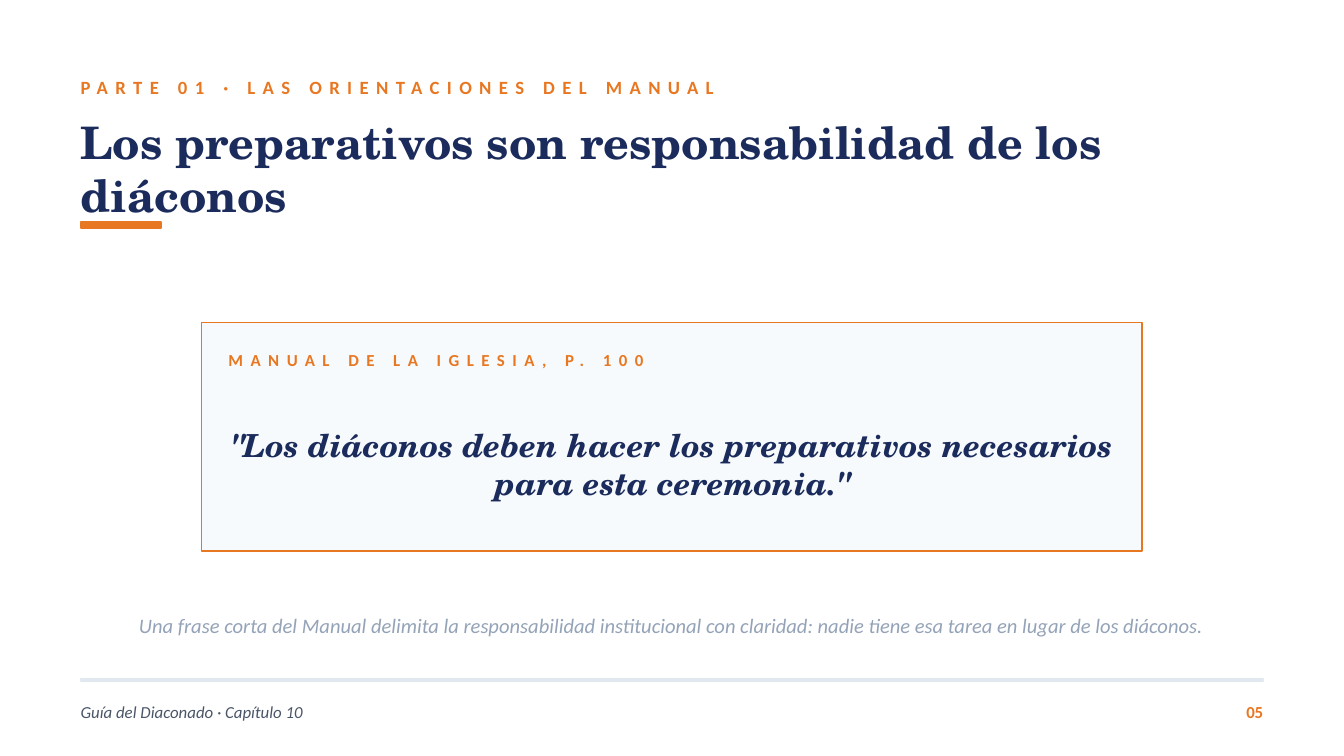
from typing import NamedTuple

from pptx import Presentation
from pptx.dml.color import RGBColor
from pptx.enum.shapes import MSO_SHAPE
from pptx.enum.text import MSO_ANCHOR, MSO_AUTO_SIZE, PP_ALIGN
from pptx.util import Pt

RECTANGLE = MSO_SHAPE.RECTANGLE
TOP, MIDDLE = MSO_ANCHOR.TOP, MSO_ANCHOR.MIDDLE
LEFT, CENTER, RIGHT = PP_ALIGN.LEFT, PP_ALIGN.CENTER, PP_ALIGN.RIGHT
NO_AUTO_SIZE = MSO_AUTO_SIZE.NONE
TITLE_ONLY = 5

SANS, SERIF = "Calibri", "TeX Gyre Schola"
COLORS = {
    "navy": "1A2B5C",
    "orange": "E87722",
    "panel": "F7FAFC",
    "caption": "94A3B8",
    "rule": "E2E8F0",
    "footer": "4A5568",
    "background": "FFFFFF",
}

# Page grid, in points
PAGE_WIDTH, PAGE_HEIGHT = 720, 405
MARGIN = 43.2
CONTENT_WIDTH = PAGE_WIDTH - 2 * MARGIN
PANEL_LEFT, PANEL_PADDING = 108, 14.4
PANEL_WIDTH = PAGE_WIDTH - 2 * PANEL_LEFT
QUOTE_LEFT = PANEL_LEFT + PANEL_PADDING
QUOTE_WIDTH = PANEL_WIDTH - 2 * PANEL_PADDING
FOOTER_TOP, FOOTER_HEIGHT = 370.8, 21.6
NUMBER_WIDTH = 36


class Box(NamedTuple):
    left: float
    top: float
    width: float
    height: float


class Block(NamedTuple):
    box: Box
    fill: str
    line: str


def color(name: str) -> RGBColor:
    return RGBColor.from_string(COLORS[name])


def add_block(slide, block: Block) -> None:
    shape = slide.shapes.add_shape(RECTANGLE, *map(Pt, block.box))
    shape.shadow.inherit = False
    shape.fill.solid()
    shape.fill.fore_color.rgb = color(block.fill)
    shape.line.color.rgb = color(block.line)
    shape.line.width = Pt(1)


def add_text(slide, text: str, box: Box, *, size: float, ink: str,
             font: str = SANS, bold: bool = False, italic: bool = False,
             align=LEFT, anchor=MIDDLE, spacing: float = 0, shape=None) -> None:
    """Write text in a new text box, or in the given placeholder."""
    if shape is None:
        shape = slide.shapes.add_textbox(*map(Pt, box))
    shape.left, shape.top, shape.width, shape.height = map(Pt, box)
    frame = shape.text_frame
    frame.margin_left = frame.margin_top = 0
    frame.margin_right = frame.margin_bottom = 0
    frame.word_wrap = True
    frame.auto_size = NO_AUTO_SIZE
    frame.vertical_anchor = anchor
    paragraph = frame.paragraphs[0]
    paragraph.alignment = align
    run = paragraph.add_run()
    run.text = text
    run.font.name, run.font.size = font, Pt(size)
    run.font.bold, run.font.italic = bold, italic
    run.font.color.rgb = color(ink)
    if spacing:
        run._r.get_or_add_rPr().set("spc", str(round(spacing * 100)))


def main() -> None:
    presentation = Presentation()
    presentation.slide_width = Pt(PAGE_WIDTH)
    presentation.slide_height = Pt(PAGE_HEIGHT)
    slide = presentation.slides.add_slide(presentation.slide_layouts[TITLE_ONLY])
    slide.background.fill.solid()
    slide.background.fill.fore_color.rgb = color("background")

    # Accent bar, quote panel and footer rule
    for block in (
        Block(Box(MARGIN, 118.8, 43.2, 3.6), "orange", "orange"),
        Block(Box(PANEL_LEFT, 172.8, PANEL_WIDTH, 122.4), "panel", "orange"),
        Block(Box(MARGIN, 363.6, CONTENT_WIDTH, 1.44), "rule", "rule"),
    ):
        add_block(slide, block)

    # Heading
    add_text(slide, "PARTE 01 · LAS ORIENTACIONES DEL MANUAL",
             Box(MARGIN, 36, 504, 21.6), size=10, ink="orange", bold=True, spacing=4)
    add_text(slide, "Los preparativos son responsabilidad de los diáconos",
             Box(MARGIN, 61.2, 648, 50.4), size=24, ink="navy", font=SERIF,
             bold=True, anchor=TOP, shape=slide.shapes.title)

    # Quote
    add_text(slide, "MANUAL DE LA IGLESIA, P. 100",
             Box(QUOTE_LEFT, 183.6, 432, 18), size=9, ink="orange", bold=True, spacing=4)
    add_text(slide, '"Los diáconos deben hacer los preparativos necesarios para esta ceremonia."',
             Box(QUOTE_LEFT, 208.8, QUOTE_WIDTH, 79.2), size=17, ink="navy",
             font=SERIF, bold=True, italic=True, align=CENTER)

    # Caption
    add_text(slide, "Una frase corta del Manual delimita la responsabilidad institucional "
             "con claridad: nadie tiene esa tarea en lugar de los diáconos.",
             Box(MARGIN, 316.8, CONTENT_WIDTH, 36), size=11, ink="caption",
             italic=True, align=CENTER)

    # Footer
    add_text(slide, "Guía del Diaconado · Capítulo 10",
             Box(MARGIN, FOOTER_TOP, 432, FOOTER_HEIGHT), size=9, ink="footer", italic=True)
    add_text(slide, "05",
             Box(PAGE_WIDTH - MARGIN - NUMBER_WIDTH, FOOTER_TOP, NUMBER_WIDTH, FOOTER_HEIGHT),
             size=9, ink="orange", bold=True, align=RIGHT)

    presentation.save("out.pptx")


if __name__ == "__main__":
    main()
